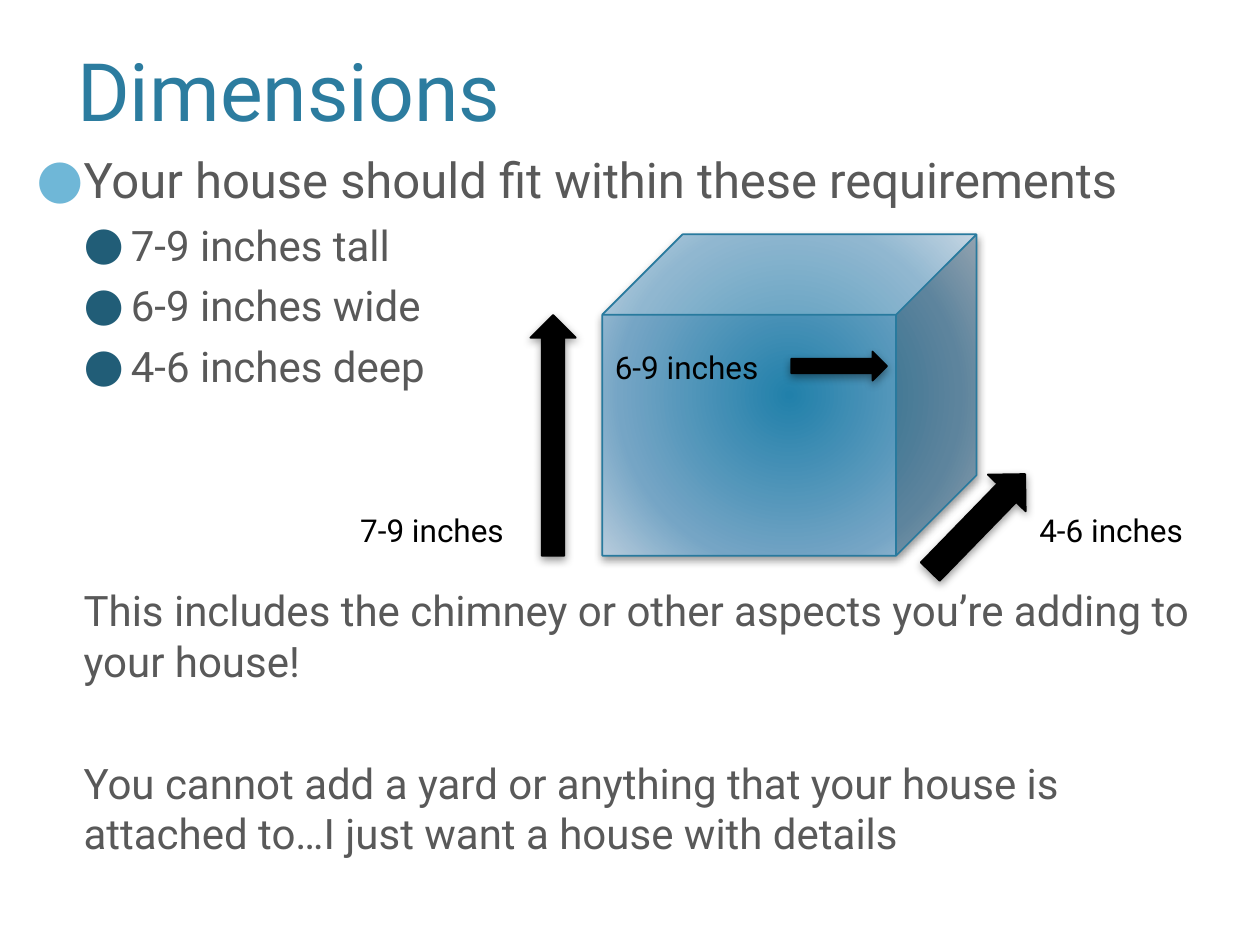
"""Build the slide that gives the permitted dimensions of the house."""
import lxml.etree
import pptx
import pptx.dml.color
import pptx.enum.shapes
import pptx.enum.text
import pptx.oxml
import pptx.oxml.ns
import pptx.util

Pt = pptx.util.Pt
RGBColor = pptx.dml.color.RGBColor
MSO_SHAPE = pptx.enum.shapes.MSO_SHAPE
NAMESPACE = pptx.oxml.ns.nsdecls("a")
FONT = "Roboto"
COLORS = {
    "title": "2C7C9F", "body": "595959", "black": "000000",
    "main_bullet": "6FB7D7", "sub_bullet": "215D77", "cube_line": "287A9E",
    "cube_center": "2180AA", "cube_middle": "75A5C5", "cube_edge": "B8CCDC",
}


def format_runs(paragraph, size, color):
    for run in paragraph.runs:
        run.font.name = FONT
        run.font.size = Pt(size)
        run.font.color.rgb = RGBColor.from_string(COLORS[color])


def add_solid(kind, left, top, width, height, line_color):
    shape = slide.shapes.add_shape(kind, Pt(left), Pt(top), Pt(width), Pt(height))
    shape.fill.solid()
    shape.fill.fore_color.rgb = RGBColor.from_string(COLORS["black"])
    shape.line.color.rgb = RGBColor.from_string(COLORS[line_color])
    shape.line.width = Pt(1)
    shape.shadow.inherit = False
    effects = shape._element.spPr.find(pptx.oxml.ns.qn("a:effectLst"))
    effects.append(pptx.oxml.parse_xml(
        f'<a:outerShdw {NAMESPACE} blurRad="{Pt(5)}" dist="{Pt(2)}" dir="5400000" rotWithShape="0">'
        f'<a:srgbClr val="{COLORS["black"]}"><a:alpha val="40000"/></a:srgbClr></a:outerShdw>'))
    return shape


presentation = pptx.Presentation()
presentation.slide_width = Pt(720)
presentation.slide_height = Pt(540)
slide = presentation.slides.add_slide(presentation.slide_layouts[5])

title = slide.shapes.title
title.left, title.top, title.width, title.height = Pt(13.7), Pt(18), Pt(302.4), Pt(64)
title.text_frame.text = "Dimensions"
title.text_frame.vertical_anchor = pptx.enum.text.MSO_ANCHOR.BOTTOM
title.text_frame.paragraphs[0].alignment = pptx.enum.text.PP_ALIGN.CENTER
format_runs(title.text_frame.paragraphs[0], 46, "title")

requirements = [
    ("Your house should fit within these requirements", 28, 27, 20, "main_bullet"),
    ("7-9 inches tall", 24, 54, 6, "sub_bullet"),
    ("6-9 inches wide", 24, 54, 6, "sub_bullet"),
    ("4-6 inches deep", 24, 54, 6, "sub_bullet"),
    ("This includes the chimney or other aspects you’re adding to your house!", 24, 27, 110.5, None),
    ("You cannot add a yard or anything that your house is attached to…I just want a house with details",
     24, 27, 41, None),
]
body = slide.shapes.add_textbox(Pt(13.7), Pt(82), Pt(694.8), Pt(440))
body.text_frame.word_wrap = True
body.text_frame.text = "\n".join(requirement[0] for requirement in requirements)
for paragraph, (text, size, margin, gap, bullet) in zip(body.text_frame.paragraphs, requirements):
    format_runs(paragraph, size, "body")
    paragraph.space_before = Pt(gap)
    properties = paragraph._p.get_or_add_pPr()
    properties.set("marL", str(Pt(margin)))
    properties.set("indent", str(Pt(-27 if bullet else 0)))
    if bullet:
        for markup in (
            f'<a:buClr {NAMESPACE}><a:srgbClr val="{COLORS[bullet]}"/></a:buClr>',
            f'<a:buSzPct {NAMESPACE} val="110000"/>',
            f'<a:buFont {NAMESPACE} typeface="{FONT}"/>',
            f'<a:buChar {NAMESPACE} char="●"/>',
        ):
            properties.append(pptx.oxml.parse_xml(markup))

cube = add_solid(MSO_SHAPE.CUBE, 344.2, 133.9, 213.8, 183.6, "cube_line")
stops = "".join(
    f'<a:gs pos="{position * 1000}"><a:srgbClr val="{COLORS[color]}"/></a:gs>'
    for position, color in ((0, "cube_center"), (69, "cube_middle"), (100, "cube_edge")))
solid_fill = cube._element.spPr.find(pptx.oxml.ns.qn("a:solidFill"))
solid_fill.getparent().replace(solid_fill, pptx.oxml.parse_xml(
    f'<a:gradFill {NAMESPACE} rotWithShape="1"><a:gsLst>{stops}</a:gsLst><a:path path="circle">'
    '<a:fillToRect l="100000" t="100000" r="100000" b="100000"/></a:path></a:gradFill>'))

for kind, left, top, width, height, rotation in (
    (MSO_SHAPE.RIGHT_ARROW, 452.2, 200.9, 54.7, 16.6, 0),
    (MSO_SHAPE.UP_ARROW, 303.1, 180, 25.9, 137.5, 0),
    (MSO_SHAPE.RIGHT_ARROW, 519.8, 283.7, 77.8, 30.2, 314.2),
):
    arrow = add_solid(kind, left, top, width, height, "black")
    arrow.rotation = rotation

for text, left, top in (
    ("6-9 inches", 344.2, 195.1), ("7-9 inches", 198.7, 288.7), ("4-6 inches", 586.8, 288.7),
):
    label = slide.shapes.add_textbox(Pt(left), Pt(top), Pt(106), Pt(29))
    label.text_frame.word_wrap = True
    label.text_frame.text = text
    format_runs(label.text_frame.paragraphs[0], 18, "black")

presentation.save("out.pptx")
